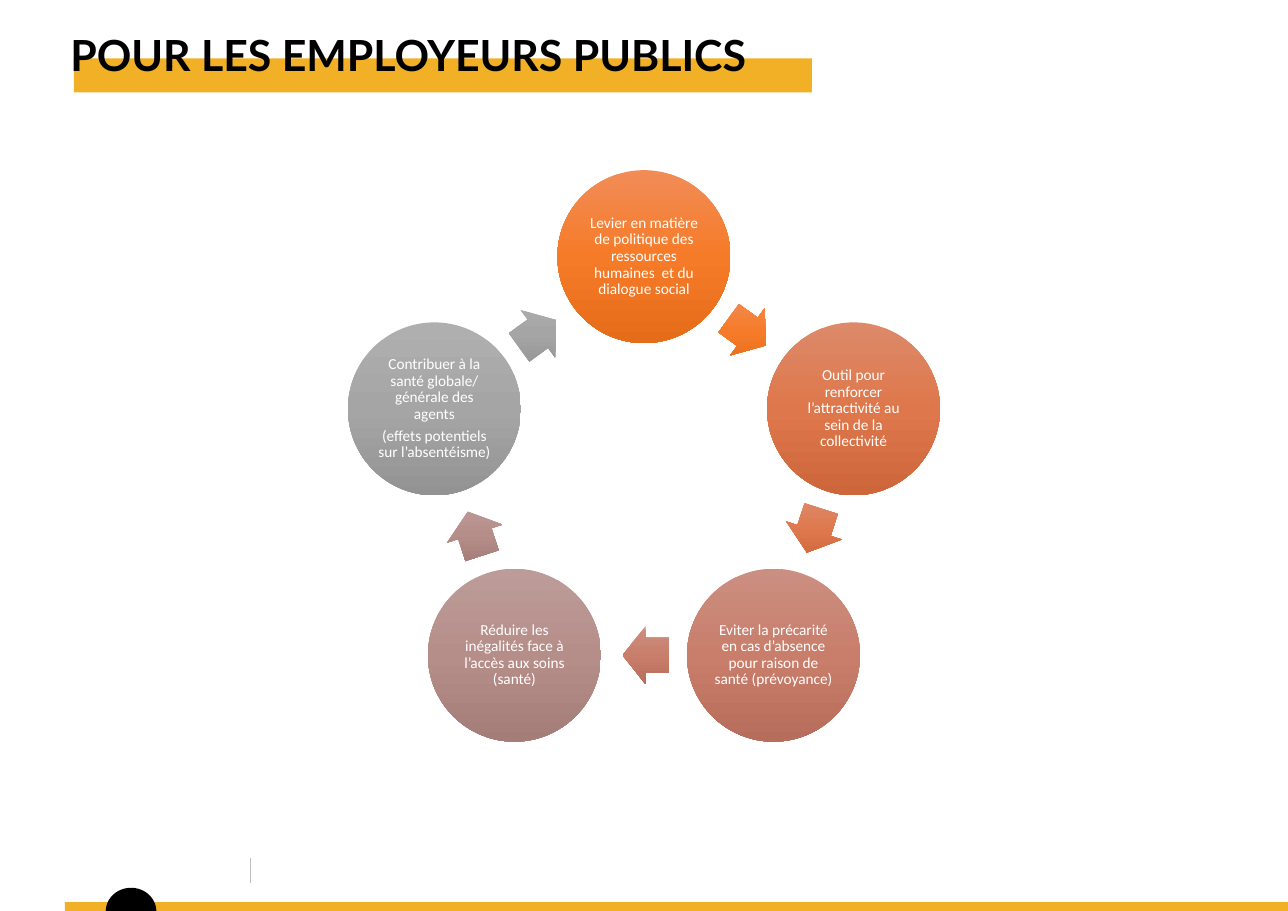
import copy
import dataclasses
import math

import pptx
import pptx.dml.color
import pptx.enum.shapes
import pptx.enum.text
import pptx.oxml.ns
import pptx.util
from lxml import etree

Inches = pptx.util.Inches
Pt = pptx.util.Pt
Preset = pptx.enum.shapes.MSO_SHAPE

COLORS = {
    "band": "F2B027",
    "black": "000000",
    "white": "FFFFFF",
    "divider": "BFBFBF",
}

RING_CENTER = (5.845, 4.33)
RING_RADIUS = 2.0
CIRCLE_SIZE = 1.57
ARROW_WIDTH = 0.42
ARROW_HEIGHT = 0.53
ARROW_SETBACK = 0.015


@dataclasses.dataclass(frozen=True)
class Benefit:
    paragraphs: tuple[str, ...]
    gradient: tuple[str, str, str]


@dataclasses.dataclass(frozen=True)
class Block:
    preset: int
    left: float
    top: float
    width: float
    height: float
    color: str
    adjustments: tuple[float, ...] = ()


BENEFITS = [
    Benefit(
        ("Levier en matière de politique des ressources humaines  et du dialogue social",),
        ("F18C57", "F67B28", "E56C19"),
    ),
    Benefit(
        ("Outil pour renforcer l’attractivité au sein de la collectivité",),
        ("DD8A6A", "DE774B", "CD673B"),
    ),
    Benefit(
        ("Eviter la précarité en cas d’absence pour raison de santé (prévoyance)",),
        ("CB8F81", "C97E6B", "B76D5B"),
    ),
    Benefit(
        ("Réduire les inégalités face à l’accès aux soins (santé)",),
        ("BC9C99", "B68E89", "A47C78"),
    ),
    Benefit(
        ("Contribuer à la santé globale/ générale des agents",
         "(effets potentiels sur l’absentéisme)"),
        ("AFAFAF", "A5A5A5", "939393"),
    ),
]

BLOCKS = [
    Block(Preset.RECTANGLE, 0.59, 8.19, 11.1, 0.08, "band"),
    Block(Preset.CHORD, 0.96, 8.06, 0.46, 0.43, "black", (108.37, 215.49)),
    Block(Preset.RECTANGLE, 0.67, 0.53, 6.7, 0.31, "band"),
]


def rgb(value: str) -> pptx.dml.color.RGBColor:
    return pptx.dml.color.RGBColor.from_string(value)


def add_plain_shape(slide, preset, left: float, top: float, width: float, height: float):
    shape = slide.shapes.add_shape(
        preset, Inches(left), Inches(top), Inches(width), Inches(height))
    shape.shadow.inherit = False
    shape.line.fill.background()
    return shape


def add_block(slide, block: Block) -> None:
    shape = add_plain_shape(
        slide, block.preset, block.left, block.top, block.width, block.height)
    shape.fill.solid()
    shape.fill.fore_color.rgb = rgb(COLORS[block.color])
    for index, value in enumerate(block.adjustments):
        shape.adjustments[index] = value


def add_divider(slide) -> None:
    divider = slide.shapes.add_connector(
        pptx.enum.shapes.MSO_CONNECTOR.STRAIGHT,
        Inches(2.27), Inches(8.02), Inches(2.27), Inches(7.79))
    divider.line.color.rgb = rgb(COLORS["divider"])
    divider.line.width = Pt(0.75)
    etree.SubElement(divider._element.spPr, pptx.oxml.ns.qn("a:effectLst"))


def add_title(slide, text: str) -> None:
    box = slide.shapes.add_textbox(Inches(0.54), Inches(0.16), Inches(7.09), Inches(0.67))
    frame = box.text_frame
    frame.word_wrap = True
    frame.auto_size = pptx.enum.text.MSO_AUTO_SIZE.SHAPE_TO_FIT_TEXT
    set_margins(frame, 0.1)
    paragraph = frame.paragraphs[0]
    paragraph.text = text
    paragraph.font.name = "Lato"
    paragraph.font.size = Pt(28)
    paragraph.font.bold = True
    paragraph.font.color.rgb = rgb(COLORS["black"])


def set_margins(frame, margin: float) -> None:
    frame.margin_left = frame.margin_right = Inches(margin)
    frame.margin_top = frame.margin_bottom = Inches(margin)


def set_gradient(shape, colors: tuple[str, str, str]) -> None:
    shape.fill.gradient()
    shape.fill.gradient_angle = 270
    gradient = shape._element.spPr.find(pptx.oxml.ns.qn("a:gradFill"))
    gradient.set("rotWithShape", "0")
    stop_list = gradient.find(pptx.oxml.ns.qn("a:gsLst"))
    stop_list.append(copy.deepcopy(stop_list[-1]))
    for index, stop in enumerate(shape.fill.gradient_stops):
        stop.position = index / 2
        stop.color.rgb = rgb(colors[index])


def ring_point(angle: float, radius: float) -> tuple[float, float]:
    radians = math.radians(angle)
    return (RING_CENTER[0] + radius * math.sin(radians),
            RING_CENTER[1] - radius * math.cos(radians))


def add_circle(slide, benefit: Benefit, angle: float) -> None:
    x, y = ring_point(angle, RING_RADIUS)
    circle = add_plain_shape(
        slide, Preset.OVAL, x - CIRCLE_SIZE / 2, y - CIRCLE_SIZE / 2,
        CIRCLE_SIZE, CIRCLE_SIZE)
    set_gradient(circle, benefit.gradient)
    frame = circle.text_frame
    frame.word_wrap = True
    frame.vertical_anchor = pptx.enum.text.MSO_ANCHOR.MIDDLE
    set_margins(frame, 0.01)
    frame.text = "\n".join(benefit.paragraphs)
    for paragraph in frame.paragraphs:
        paragraph.alignment = pptx.enum.text.PP_ALIGN.CENTER
        paragraph.line_spacing = 0.9
        paragraph.space_after = Pt(3.5)
        paragraph.font.name = "Calibri"
        paragraph.font.size = Pt(10)
        paragraph.font.color.rgb = rgb(COLORS["white"])


def add_arrow(slide, benefit: Benefit, angle: float, step: float) -> None:
    direction = angle + step / 2
    x, y = ring_point(direction, RING_RADIUS * math.cos(math.radians(step / 2)))
    x -= ARROW_SETBACK * math.cos(math.radians(direction))
    y -= ARROW_SETBACK * math.sin(math.radians(direction))
    arrow = add_plain_shape(
        slide, Preset.RIGHT_ARROW, x - ARROW_WIDTH / 2, y - ARROW_HEIGHT / 2,
        ARROW_WIDTH, ARROW_HEIGHT)
    arrow.adjustments[0] = 0.6
    arrow.adjustments[1] = 0.5
    arrow.rotation = direction
    set_gradient(arrow, benefit.gradient)


def main() -> None:
    presentation = pptx.Presentation()
    presentation.slide_width = Inches(11.69)
    presentation.slide_height = Inches(8.27)
    slide = presentation.slides.add_slide(presentation.slide_layouts[6])
    for block in BLOCKS:
        add_block(slide, block)
    add_divider(slide)
    add_title(slide, "POUR LES EMPLOYEURS PUBLICS")
    step = 360 / len(BENEFITS)
    for index, benefit in enumerate(BENEFITS):
        add_circle(slide, benefit, index * step)
        add_arrow(slide, benefit, index * step, step)
    presentation.save("out.pptx")


if __name__ == "__main__":
    main()
